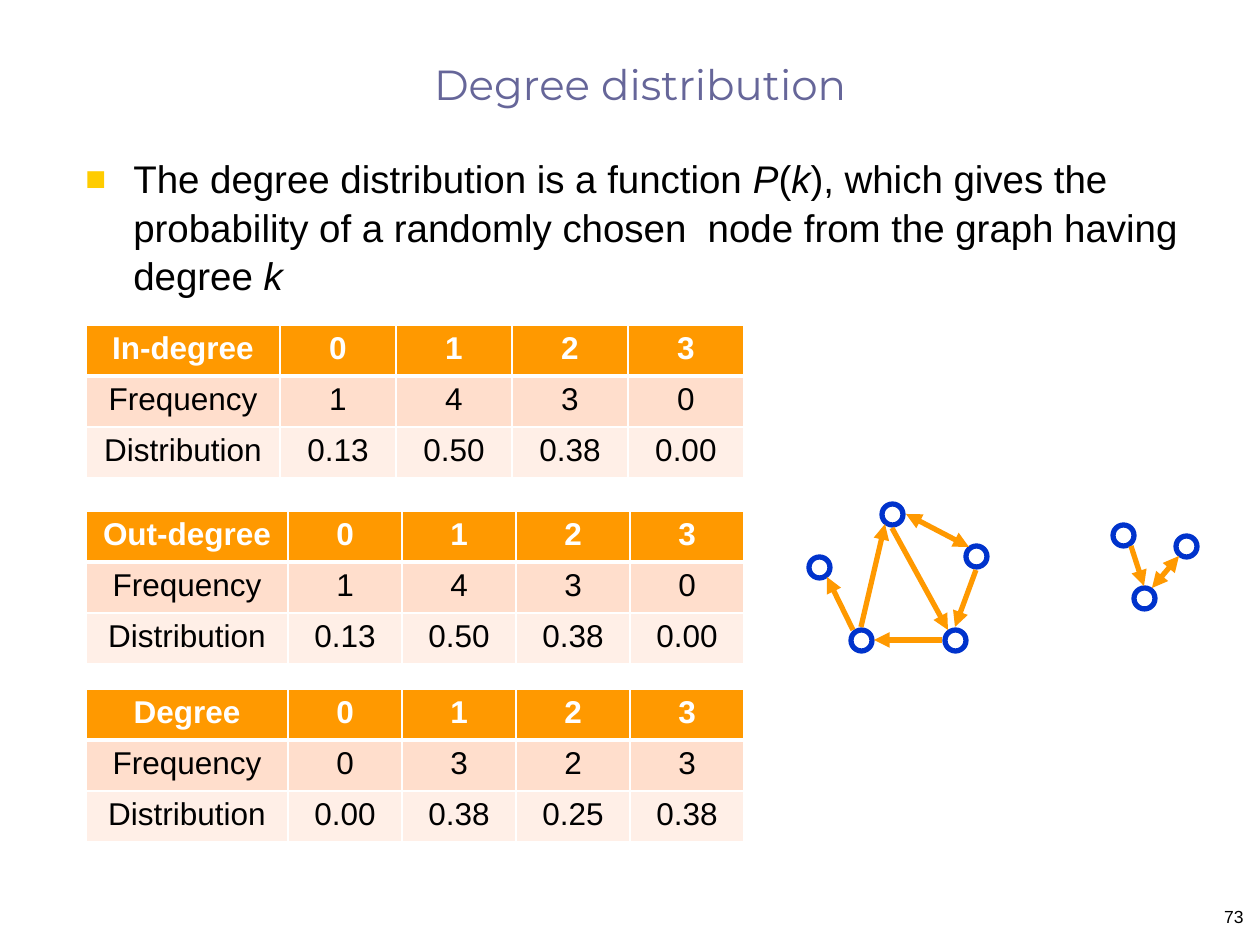
from dataclasses import dataclass

from lxml import etree
from pptx import Presentation
from pptx import util as u
from pptx.dml.color import RGBColor
from pptx.enum import shapes, text
from pptx.oxml import ns

PX = 914400 / 126  # EMU in one px
COLORS = {
    "title": "666699", "ink": "000000", "bullet": "FFCC00", "white": "FFFFFF",
    "node": "0033CC", "orange": "FF9900", "band": "FFDECC", "pale": "FFEFE7",
}
NODE_SIZE = 21
ROW_HEIGHT = 51
TABLE_LEFT = 86
ROW_FILLS = ("orange", "band", "pale")


@dataclass
class DegreeTable:
    top: int
    label_width: int
    value_width: int
    label: str
    frequency: tuple[str, ...]
    distribution: tuple[str, ...]


@dataclass
class Edge:
    start: tuple[int, int]
    end: tuple[int, int]
    two_way: bool = False


TABLES = [
    DegreeTable(325, 194, 116, "In-degree", ("1", "4", "3", "0"),
                ("0.13", "0.50", "0.38", "0.00")),
    DegreeTable(511, 202, 114, "Out-degree", ("1", "4", "3", "0"),
                ("0.13", "0.50", "0.38", "0.00")),
    DegreeTable(689, 202, 114, "Degree", ("0", "3", "2", "3"),
                ("0.00", "0.38", "0.25", "0.38")),
]
NODES = [(882, 504), (966, 546), (945, 630), (851, 630), (809, 557),
         (1113, 525), (1134, 588), (1176, 536)]
EDGES = [
    Edge((906, 514), (969, 547), two_way=True),
    Edge((976, 570), (955, 627)),
    Edge((942, 640), (874, 640)),
    Edge((892, 528), (948, 630)),
    Edge((861, 627), (885, 524)),
    Edge((853, 630), (827, 577)),
    Edge((1131, 546), (1144, 586)),
    Edge((1152, 588), (1179, 556), two_way=True),
]


def px(*lengths: int) -> list[int]:
    return [round(length * PX) for length in lengths]


def rgb(name: str) -> RGBColor:
    return RGBColor.from_string(COLORS[name])


def sub(parent, tag: str, **attributes: str):
    return etree.SubElement(parent, ns.qn(tag), attributes)


def set_font(paragraph, name: str, size: int, color: str, bold: bool = False) -> None:
    font = paragraph.font
    font.name, font.size, font.bold = name, u.Pt(size), bold
    font.color.rgb = rgb(color)


def add_text(slide, left: int, top: int, width: int, height: int):
    frame = slide.shapes.add_textbox(*px(left, top, width, height)).text_frame
    frame.word_wrap = True
    return frame


def add_bullet(paragraph, indent: int) -> None:
    (step,) = px(indent)
    properties = paragraph._p.get_or_add_pPr()
    properties.set("marL", str(step))
    properties.set("indent", str(-step))
    sub(sub(properties, "a:buClr"), "a:srgbClr", val=COLORS["bullet"])
    sub(properties, "a:buSzPct", val="90000")
    sub(properties, "a:buFont", typeface="Arial")
    sub(properties, "a:buChar", char="■")


def add_node(slide, left: int, top: int) -> None:
    node = slide.shapes.add_shape(
        shapes.MSO_SHAPE.OVAL, *px(left, top, NODE_SIZE, NODE_SIZE))
    node.shadow.inherit = False
    node.fill.background()
    node.line.color.rgb = rgb("node")
    node.line.width = u.Pt(3)


def add_edge(slide, edge: Edge) -> None:
    arrow = slide.shapes.add_connector(
        shapes.MSO_CONNECTOR.STRAIGHT, *px(*edge.start, *edge.end))
    arrow.line.color.rgb = rgb("orange")
    arrow.line.width = u.Pt(3)
    line = arrow.line._get_or_add_ln()
    if edge.two_way:
        sub(line, "a:headEnd", type="triangle")
    sub(line, "a:tailEnd", type="triangle")
    sub(arrow._element.spPr, "a:effectLst")


def add_borders(cell, row: int) -> None:
    widths = {"L": 1, "R": 1, "T": 3 if row == 1 else 1, "B": 3 if row == 0 else 1}
    properties = cell._tc.get_or_add_tcPr()
    for side, width in widths.items():
        border = sub(properties, f"a:ln{side}", w=str(u.Pt(width)))
        sub(sub(border, "a:solidFill"), "a:srgbClr", val=COLORS["white"])


def add_degree_table(slide, data: DegreeTable) -> None:
    rows = [(data.label, "0", "1", "2", "3"),
            ("Frequency", *data.frequency),
            ("Distribution", *data.distribution)]
    widths = [data.label_width] + [data.value_width] * 4
    table = slide.shapes.add_table(
        len(rows), len(widths),
        *px(TABLE_LEFT, data.top, sum(widths), ROW_HEIGHT * len(rows))).table
    for column, width in zip(table.columns, px(*widths)):
        column.width = width
    for r, values in enumerate(rows):
        (table.rows[r].height,) = px(ROW_HEIGHT)
        for c, value in enumerate(values):
            cell = table.cell(r, c)
            add_borders(cell, r)
            cell.fill.solid()
            cell.fill.fore_color.rgb = rgb(ROW_FILLS[r])
            cell.text = value
            paragraph = cell.text_frame.paragraphs[0]
            paragraph.alignment = text.PP_ALIGN.CENTER
            set_font(paragraph, "Arial", 18, "ink" if r else "white", bold=r == 0)


def main() -> None:
    deck = Presentation()
    deck.slide_width, deck.slide_height = u.Inches(10), u.Inches(7.5)
    slide = deck.slides.add_slide(deck.slide_layouts[6])

    # Title
    title = add_text(slide, 73, 42, 1134, 73)
    title.vertical_anchor = text.MSO_ANCHOR.BOTTOM
    heading = title.paragraphs[0]
    heading.text = "Degree distribution"
    heading.alignment = text.PP_ALIGN.CENTER
    set_font(heading, "Montserrat", 24, "title")

    # Definition
    definition = add_text(slide, 73, 147, 1134, 160).paragraphs[0]
    definition.line_spacing = 1.05
    add_bullet(definition, 48)
    set_font(definition, "Arial", 22, "ink")
    for words, italic in [
        ("The degree distribution is a function ", False), ("P", True),
        ("(", False), ("k", True),
        ("), which gives the probability of a randomly chosen  node "
         "from the graph having degree ", False), ("k", True),
    ]:
        run = definition.add_run()
        run.text = words
        run.font.italic = italic

    # Page number
    page_number = add_text(slide, 1203, 900, 53, 42).paragraphs[0]
    page_number.text = "73"
    page_number.alignment = text.PP_ALIGN.RIGHT
    set_font(page_number, "Arial", 10, "ink")

    # Directed graph
    for left, top in NODES:
        add_node(slide, left, top)
    for edge in EDGES:
        add_edge(slide, edge)

    # Degree tables
    for data in TABLES:
        add_degree_table(slide, data)

    deck.save("out.pptx")


if __name__ == "__main__":
    main()
